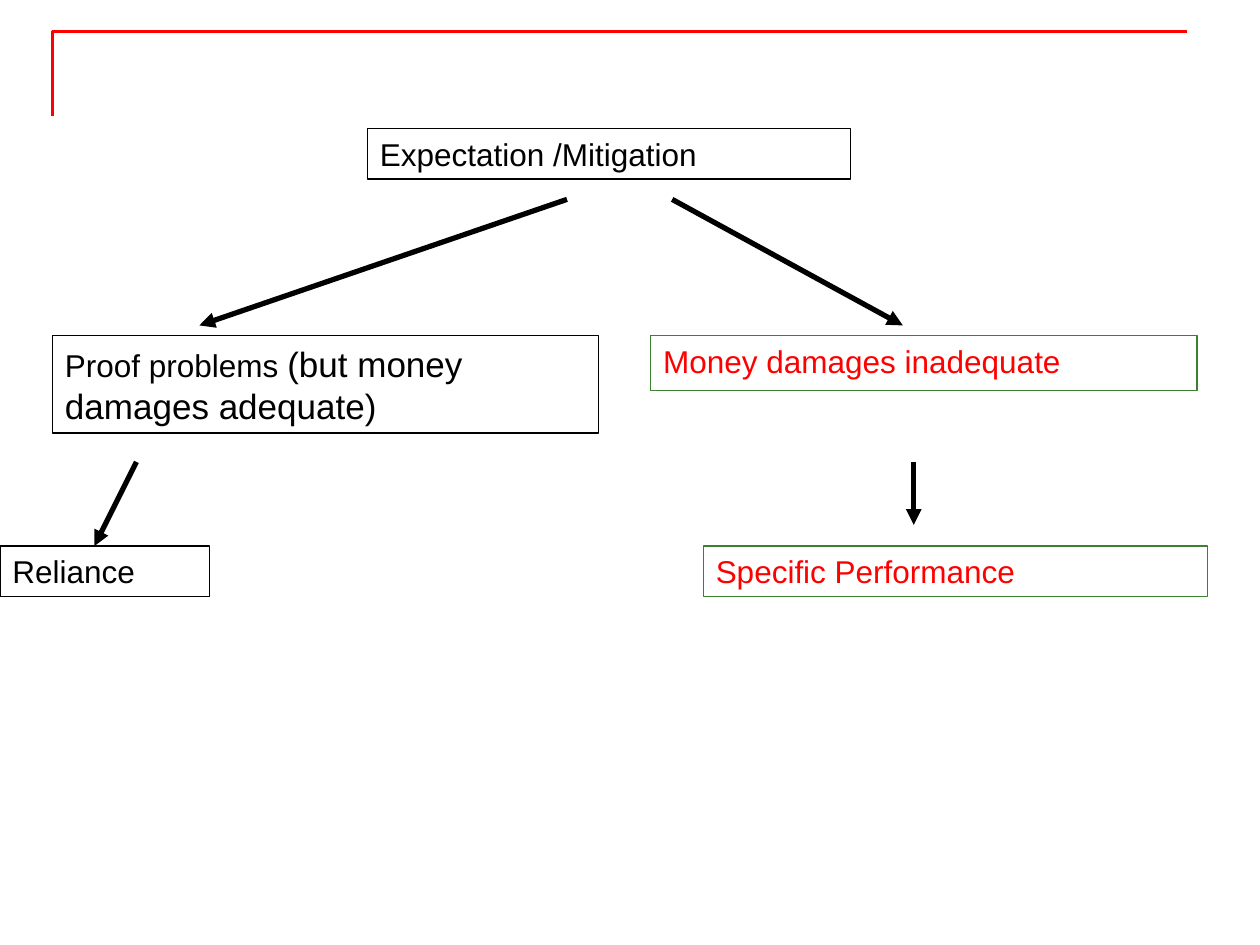
from lxml import etree
from pptx import Presentation
from pptx import util as u
from pptx.dml.color import RGBColor
from pptx.enum import shapes, text
from pptx.oxml.ns import qn

COLORS = {"black": "000000", "red": "FF0000", "green": "3B812F"}
FONT = "Arial"


def style_line(sp, color, width):
    sp.line.color.rgb = RGBColor.from_string(COLORS[color])
    sp.line.width = u.Pt(width)


prs = Presentation()
prs.slide_width, prs.slide_height = u.Cm(25.4), u.Cm(19.05)
s = prs.slides.add_slide(prs.slide_layouts[6])

# Corner rule at the top of the slide
left, top, right, bottom = 1.06, 0.64, 23.92, 2.33
fb = s.shapes.build_freeform(u.Cm(left), u.Cm(bottom))
fb.add_line_segments([(u.Cm(left), u.Cm(top)), (u.Cm(right), u.Cm(top))], close=False)
corner = fb.convert_to_shape()
corner.shadow.inherit = False
corner.fill.background()
style_line(corner, "red", 1.5)

# Boxes: left, top, width, height, line colour, text colour, (text, size) runs
middle, lower = 6.77, 11.01
boxes = [
    (7.41, 2.59, 9.74, 1.02, "black", "black", [("Expectation /Mitigation", 18)]),
    (1.06, middle, 11.01, 1.96, "black", "black",
     [("Proof problems ", 18), ("(but money damages adequate)", 20)]),
    (13.12, middle, 11.01, 1.11, "green", "red", [("Money damages inadequate", 18)]),
    (14.18, lower, 10.16, 1.02, "green", "red", [("Specific Performance", 18)]),
    (0, lower, 4.23, 1.02, "black", "black", [("Reliance", 18)]),
]
for x, y, w, h, line, color, runs in boxes:
    sp = s.shapes.add_shape(shapes.MSO_SHAPE.RECTANGLE, u.Cm(x), u.Cm(y), u.Cm(w), u.Cm(h))
    sp.shadow.inherit = False
    sp.fill.background()
    style_line(sp, line, 0.75)
    tf = sp.text_frame
    tf.word_wrap = True
    tf.vertical_anchor = text.MSO_ANCHOR.TOP
    p = tf.paragraphs[0]
    p.alignment = text.PP_ALIGN.LEFT
    for words, size in runs:
        r = p.add_run()
        r.text = words
        r.font.name = FONT
        r.font.size = u.Pt(size)
        r.font.color.rgb = RGBColor.from_string(COLORS[color])

# Arrows: start x, start y, end x, end y
arrows = [
    (11.43, 4.02, 4.02, 6.56),
    (13.55, 4.02, 18.2, 6.56),
    (18.42, 9.31, 18.42, 10.58),
    (2.75, 9.31, 1.9, lower),
]
for ends in arrows:
    arrow = s.shapes.add_connector(shapes.MSO_CONNECTOR.STRAIGHT, *map(u.Cm, ends))
    style_line(arrow, "black", 3)
    etree.SubElement(arrow.line._get_or_add_ln(), qn("a:tailEnd"), type="triangle")
    etree.SubElement(arrow._element.spPr, qn("a:effectLst"))

prs.save("out.pptx")
